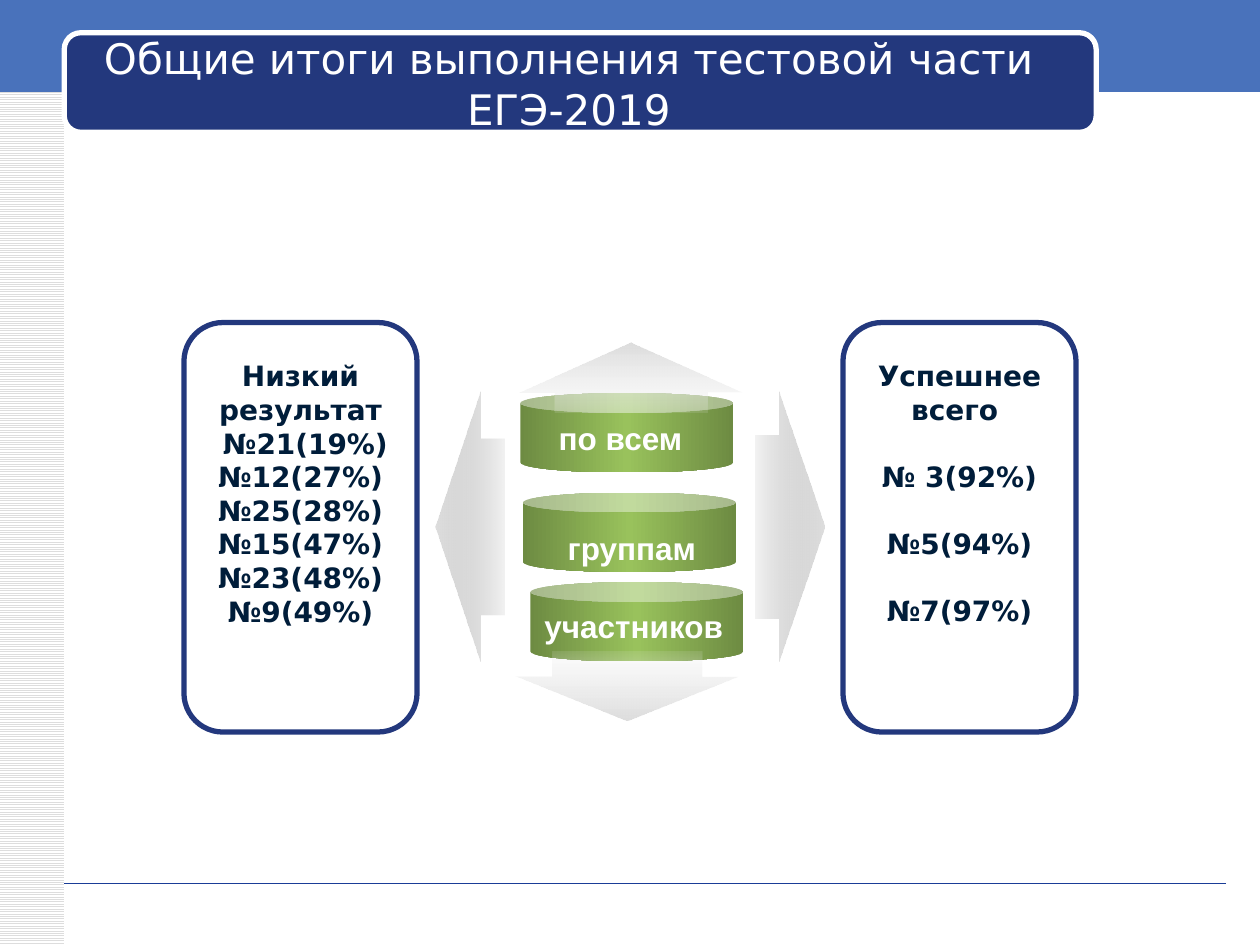
from lxml.etree import SubElement
from pptx import Presentation
from pptx.dml.color import RGBColor
from pptx.enum.dml import MSO_PATTERN
from pptx.enum.shapes import MSO_CONNECTOR, MSO_SHAPE
from pptx.enum.text import MSO_ANCHOR, MSO_AUTO_SIZE, PP_ALIGN
from pptx.oxml.ns import qn
from pptx.util import Inches, Pt

WHITE = RGBColor(0xFF, 0xFF, 0xFF)
NAVY = RGBColor(0x23, 0x38, 0x7D)
INK = RGBColor(0x00, 0x1D, 0x3A)
BAND = RGBColor(0x49, 0x72, 0xBB)
RULE = RGBColor(0x1A, 0x3D, 0x97)
SILVER = RGBColor(0xDD, 0xDD, 0xDD)
GREY = RGBColor(0x9E, 0x9E, 0x9E)
PALE = RGBColor(0xEA, 0xEA, 0xEA)
OLIVE = RGBColor(0x6D, 0x8B, 0x42)
GREEN = RGBColor(0x99, 0xC2, 0x5C)
HEAD_FONT = "DejaVu Sans"
DISC_FONT = "Arial"


def add_shape(s, kind, box, fill=None, line=None, adj=()):
    """Preset shape in box (left, top, width, height in inches)."""
    sp = s.shapes.add_shape(kind, *map(Inches, box))
    sp.shadow.inherit = False
    for i, value in enumerate(adj):
        sp.adjustments[i] = value
    if fill is None:
        sp.fill.background()
    else:
        sp.fill.solid()
        sp.fill.fore_color.rgb = fill
    if line is None:
        sp.line.fill.background()
    else:
        sp.line.color.rgb = line
        sp.line.width = Pt(3)
    return sp


def set_gradient(sp, stops, angle=0):
    """Linear gradient; stops are (position %, colour, opacity %)."""
    sp.fill.gradient()
    sp.fill.gradient_angle = (360 - angle) % 360
    gs_list = sp.element.spPr.find(qn("a:gradFill")).find(qn("a:gsLst"))
    for gs in list(gs_list):
        gs_list.remove(gs)
    for pos, color, opacity in stops:
        gs = SubElement(gs_list, qn("a:gs"), pos=str(pos * 1000))
        clr = SubElement(gs, qn("a:srgbClr"), val=str(color))
        if opacity < 100:
            SubElement(clr, qn("a:alpha"), val=str(opacity * 1000))


def write(tf, lines, size, color, font, bold=True):
    tf.text = "\n".join(lines)
    for p in tf.paragraphs:
        p.alignment = PP_ALIGN.CENTER
        for r in p.runs:
            r.font.size = Pt(size)
            r.font.bold = bold
            r.font.name = font
            r.font.color.rgb = color


def add_text(s, box, lines, size, color, font, wrap=True):
    tf = s.shapes.add_textbox(*map(Inches, box)).text_frame
    tf.word_wrap = wrap
    write(tf, lines, size, color, font)
    return tf


def add_frame(s, box):
    """Side strip, top band and footer rule."""
    x, y, w, h = box
    strip = add_shape(s, MSO_SHAPE.RECTANGLE, (x, y, 0.51, h))
    strip.fill.patterned()
    strip.fill.pattern = MSO_PATTERN.LIGHT_HORIZONTAL
    strip.fill.fore_color.rgb = SILVER
    strip.fill.back_color.rgb = WHITE
    add_shape(s, MSO_SHAPE.RECTANGLE, (x, y - 0.03, w, 0.76), BAND)

    rule_y = Inches(y + h - 0.49)
    rule = s.shapes.add_connector(MSO_CONNECTOR.STRAIGHT, Inches(x + 0.51), rule_y,
                                  Inches(x + w - 0.27), rule_y)
    rule.line.color.rgb = RULE
    rule.line.width = Pt(0.25)
    SubElement(rule.element.spPr, qn("a:effectLst"))


def add_title(s, box, text):
    """Title placeholder on a rounded plate."""
    x, y, w, h = box
    add_shape(s, MSO_SHAPE.ROUNDED_RECTANGLE, box, NAVY, WHITE)
    title = s.shapes.title
    title.left, title.top = Inches(x + 0.09), Inches(y + 0.09)
    title.width, title.height = Inches(w - 0.36), Inches(h - 0.17)
    tf = title.text_frame
    tf.auto_size = MSO_AUTO_SIZE.NONE
    tf.vertical_anchor = MSO_ANCHOR.MIDDLE
    write(tf, [text], 24, WHITE, HEAD_FONT, bold=False)
    title.element.getparent().append(title.element)  # in front of the plate


def add_discs(s, box):
    """Stack of three green cans with their labels."""
    x, y = box[:2]
    cans = []
    for dx, dy in ((0.08, 1.5), (0.02, 0.79), (0, 0)):
        can = add_shape(s, MSO_SHAPE.CAN, (x + dx, y + dy, 1.69, 0.63), GREEN, adj=[0.25])
        set_gradient(can, [(0, OLIVE, 100), (50, GREEN, 100), (100, OLIVE, 100)])
        cans.append(can)
    tf = cans[-1].text_frame
    tf.vertical_anchor = MSO_ANCHOR.MIDDLE
    tf.margin_right = Inches(0.2)
    write(tf, ["по всем"], 18, WHITE, DISC_FONT)
    for dx, dy, w, label in ((0.27, 1.03, 1.23, "группам"), (0.08, 1.65, 1.64, "участников")):
        add_text(s, (x + dx, y + dy, w, 0.4), [label], 18, WHITE, DISC_FONT, wrap=False)


def add_arrows(s, box):
    """Four arrows pointing out of the box, fading towards the centre."""
    x, y, w, h = box
    side = [(0, SILVER, 100), (100, GREY, 12)]
    up = [(0, SILVER, 100), (100, PALE, 12)]

    def mirrored(stops):
        return [(100 - pos, color, opacity) for pos, color, opacity in reversed(stops)]

    for kind, place, adj, stops, angle in (
        (MSO_SHAPE.LEFT_ARROW, (x, y + 0.39, 0.54, 2.14), (0.656, 0.652), side, 0),
        (MSO_SHAPE.RIGHT_ARROW, (x + w - 0.54, y + 0.39, 0.54, 2.14), (0.677, 0.662),
         mirrored(side), 0),
        (MSO_SHAPE.UP_ARROW, (x + 0.66, y, 1.77, 0.55), (0.684, 0.708), up, 90),
        (MSO_SHAPE.DOWN_ARROW, (x + 0.63, y + h - 0.55, 1.77, 0.55), (0.671, 0.641),
         mirrored(up), 90),
    ):
        set_gradient(add_shape(s, kind, place, SILVER, adj=adj), stops, angle)


def add_card(s, box, lines, gap=0):
    """Outlined card: a heading followed by task results."""
    x, y, w, h = box
    add_shape(s, MSO_SHAPE.ROUNDED_RECTANGLE, box, line=NAVY)
    tf = add_text(s, (x + 0.08, y + 0.24, w - 0.16, h - 0.4), lines, 16, INK, HEAD_FONT)
    for p in tf.paragraphs[1:]:
        p.space_before = Pt(gap)


def main():
    prs = Presentation()
    prs.slide_width, prs.slide_height = Inches(10), Inches(7.5)
    s = prs.slides.add_slide(prs.slide_layouts[5])
    add_frame(s, (0, 0, 10, 7.5))
    add_title(s, (0.51, 0.26, 8.19, 0.79), "Общие итоги выполнения тестовой части ЕГЭ-2019")
    add_discs(s, (4.13, 3.12, 1.77, 2.13))
    add_card(s, (1.46, 2.56, 1.85, 3.25),
             ["Низкий результат", " №21(19%)", "№12(27%)", "№25(28%)", "№15(47%)",
              "№23(48%)", "№9(49%)"])
    add_card(s, (6.69, 2.56, 1.85, 3.25),
             ["Успешнее всего ", "№ 3(92%)", "№5(94%)", "№7(97%)"], gap=19)
    add_arrows(s, (3.46, 2.72, 3.08, 3))
    prs.save("out.pptx")


if __name__ == "__main__":
    main()
